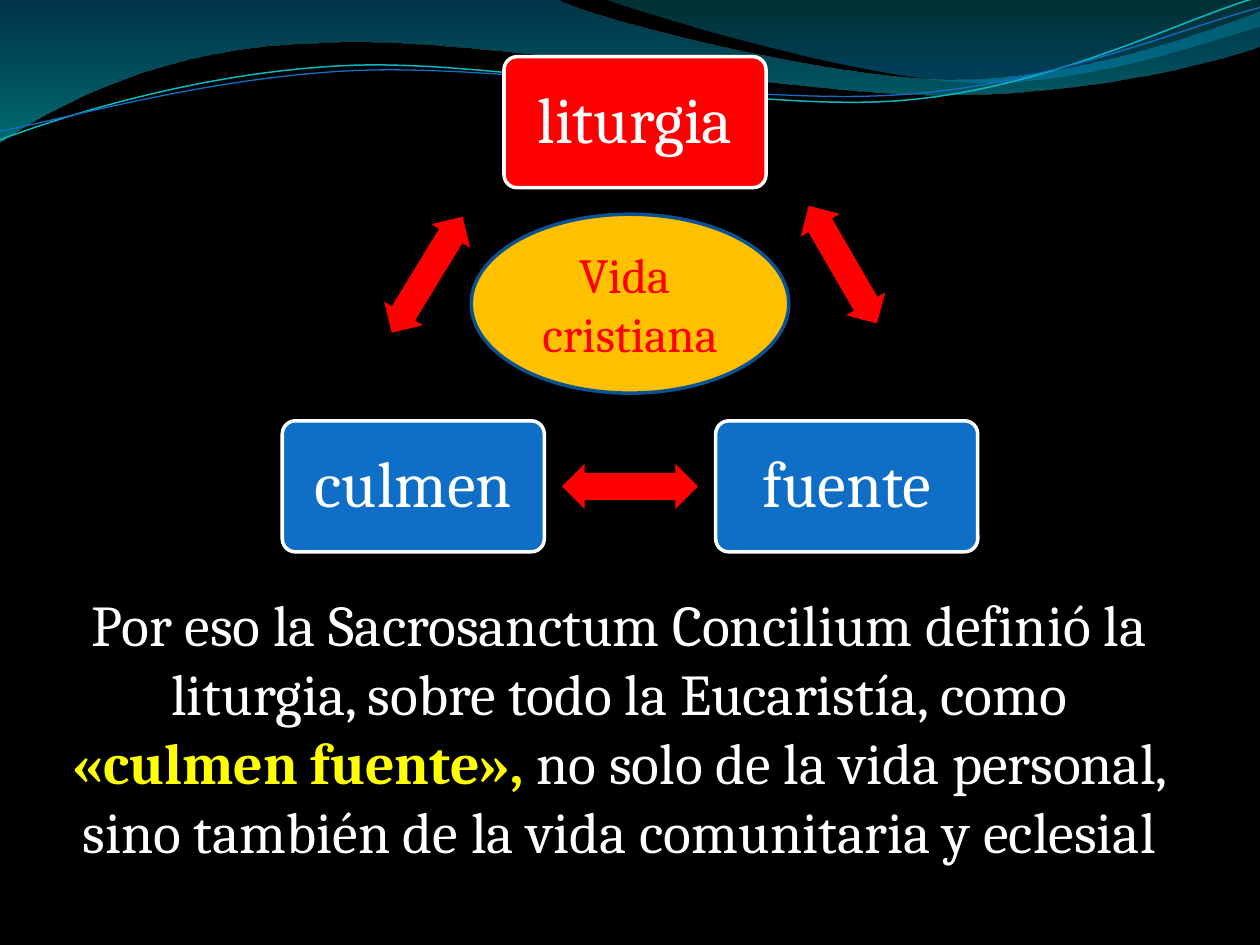
from collections import namedtuple

from lxml import etree
from pptx import Presentation
from pptx.dml.color import RGBColor
from pptx.enum.shapes import MSO_SHAPE
from pptx.enum.text import MSO_ANCHOR, PP_ALIGN
from pptx.oxml.ns import qn
from pptx.util import Inches, Pt

CARD, ARROW, OVAL = MSO_SHAPE.ROUNDED_RECTANGLE, MSO_SHAPE.LEFT_RIGHT_ARROW, MSO_SHAPE.OVAL
MIDDLE, CENTER = MSO_ANCHOR.MIDDLE, PP_ALIGN.CENTER

BLACK = RGBColor(0x00, 0x00, 0x00)
WHITE = RGBColor(0xFF, 0xFF, 0xFF)
RED = RGBColor(0xFF, 0x00, 0x00)
BLUE = RGBColor(0x0F, 0x6F, 0xC6)
NAVY = RGBColor(0x0B, 0x52, 0x92)
GOLD = RGBColor(0xFF, 0xC0, 0x00)
YELLOW = RGBColor(0xFF, 0xFF, 0x00)
AQUA = RGBColor(0x0A, 0xB8, 0xBF)
WAVE_BLUE = RGBColor(0x00, 0x74, 0xA1)
WAVE_TEAL = RGBColor(0x00, 0xC6, 0xCF)
CREST_TEAL = RGBColor(0x00, 0xA1, 0xA9)
CREST_BLUE = RGBColor(0x00, 0x8B, 0xBF)

FONT = "Cambria"
COLUMNS, ROWS = 10, 7.5
CELL = Inches(1)

# Boxes are measured in columns and rows of the slide grid.
Box = namedtuple("Box", "left top width height")
HEADER = Box(0, 0, COLUMNS, 1.2)
DIAGRAM = Box(2.24, 0.45, 5.52, 3.93)
STATEMENT = Box(0.43, 4.62, 9.06, 2.44)
CARD_SIZE, ARROW_SIZE, OVAL_SIZE = (2.08, 1.04), (1.08, 0.36), (2.52, 1.42)

# Each wave is a start point and segments: one point is a line, three a Bézier curve.
WAVE = [(0, 0), [(4.4, -0.01)],
        [(4.76, 0.17), (6.64, 0.63), (7.58, 0.63)],
        [(8.53, 0.63), (9.58, 0.26), (10, 0.09)],
        [(10.01, 0.36)],
        [(9.83, 0.44), (8.7, 0.76), (7.46, 0.75)],
        [(6.22, 0.75), (3.82, 0.28), (2.57, 0.34)],
        [(1.29, 0.36), (0.46, 0.83), (-0.01, 1.13)],
        [(0, 0)]]
CREST = [(4.79, -0.01),
         [(5.09, 0.11), (6.82, 0.62), (7.69, 0.65)],
         [(8.56, 0.69), (9.61, 0.32), (10, 0.21)],
         [(10, 0)], [(4.79, -0.01)]]
AQUA_THREAD = [(0, 1.11),
               [(0.48, 0.93), (1.58, 0.57), (2.77, 0.52)],
               [(3.95, 0.47), (5.93, 0.89), (7.13, 0.8)],
               [(8.33, 0.71), (9.38, 0.15), (9.98, -0.02)]]
BLUE_THREAD = [(0, 1.04),
               [(0.47, 0.96), (1.64, 0.61), (2.83, 0.56)],
               [(4.03, 0.51), (5.97, 0.84), (7.17, 0.75)],
               [(8.36, 0.67), (9.41, 0.21), (10, 0.06)]]


def add_outline(slide, box, wave, close):
    """Draw a freeform, turning each three-point segment into a Bézier curve."""
    start, *segments = wave
    points = [((box.left + x) * CELL, (box.top + y) * CELL)
              for x, y in [start, *(point for segment in segments for point in segment)]]
    builder = slide.shapes.build_freeform(*points[0])
    builder.add_line_segments(points[1:], close=close)
    outline = builder.convert_to_shape()
    outline.shadow.inherit = False

    lines = iter(list(outline._element.iter(qn("a:lnTo"))))
    for segment in segments:
        steps = [next(lines) for _ in segment]
        if len(steps) == 3:
            curve = etree.Element(qn("a:cubicBezTo"))
            steps[0].addprevious(curve)
            for step in steps:
                curve.append(step[0])
                step.getparent().remove(step)
    return outline


def add_header(slide, box):
    bands = [(WAVE, [(0, WAVE_BLUE, 45), (1, WAVE_TEAL, 55)]),
             (CREST, [(0, CREST_TEAL, 30), (0.8, CREST_BLUE, 45)])]
    for wave, stops in bands:
        band = add_outline(slide, box, wave, close=True)
        band.line.fill.background()
        band.fill.gradient()
        band.fill.gradient_angle = 270
        for stop, (position, color, _) in zip(band.fill.gradient_stops, stops):
            stop.position = position
            stop.color.rgb = color
        colors = band._element.spPr.iter(qn("a:srgbClr"))
        for color_element, (_, _, opacity) in zip(colors, stops):
            etree.SubElement(color_element, qn("a:alpha"), val=str(opacity * 1000))

    for wave, color, weight in [(AQUA_THREAD, AQUA, 0.85), (BLUE_THREAD, BLUE, 0.75)]:
        thread = add_outline(slide, box, wave, close=False)
        thread.fill.background()
        thread.line.color.rgb = color
        thread.line.width = Pt(weight)


def add_part(slide, box, kind, offset, size, fill, border=None):
    """Add a shape at an offset, in columns and rows, from the box's corner."""
    place = (box.left + offset[0], box.top + offset[1], *size)
    part = slide.shapes.add_shape(kind, *(int(length * CELL) for length in place))
    part.shadow.inherit = False
    part.fill.solid()
    part.fill.fore_color.rgb = fill
    if border is None:
        part.line.fill.background()
    else:
        part.line.color.rgb = border
        part.line.width = Pt(2)
    return part


def write_label(part, label, size, color):
    frame = part.text_frame
    frame.word_wrap = True
    frame.vertical_anchor = MIDDLE
    frame.text = label
    for paragraph in frame.paragraphs:
        paragraph.alignment = CENTER
        paragraph.font.name = FONT
        paragraph.font.size = Pt(size)
        paragraph.font.color.rgb = color


def add_cycle(slide, box):
    base = box.height - CARD_SIZE[1]
    cards = [("liturgia", (1.76, 0), RED),
             ("fuente", (box.width - CARD_SIZE[0], base), BLUE),
             ("culmen", (0, base), BLUE)]
    for word, offset, color in cards:
        card = add_part(slide, box, CARD, offset, CARD_SIZE, color, WHITE)
        card.adjustments[0] = 0.1
        write_label(card, word, 37, WHITE)
        card.text_frame.paragraphs[0].line_spacing = 0.9

    arrows = [((3.91, 1.47), 59.9), ((2.22, 3.23), 180), ((0.61, 1.55), 301.4)]
    for offset, rotation in arrows:
        arrow = add_part(slide, box, ARROW, offset, ARROW_SIZE, RED)
        arrow.adjustments[0], arrow.adjustments[1] = 0.6, 0.5
        arrow.rotation = rotation

    heart = add_part(slide, box, OVAL, (1.5, 1.25), OVAL_SIZE, GOLD, NAVY)
    write_label(heart, "Vida \ncristiana", 28, RED)


def add_statement(slide, box):
    statement = slide.shapes.add_textbox(*(int(length * CELL) for length in box))
    frame = statement.text_frame
    frame.word_wrap = True
    frame.margin_left, frame.margin_right = 0, Inches(0.09)
    paragraph = frame.paragraphs[0]
    paragraph.alignment = CENTER
    paragraph.font.name = FONT
    paragraph.font.size = Pt(33)
    phrases = [
        ("Por eso la Sacrosanctum Concilium definió la liturgia, "
         "sobre todo la Eucaristía, como ", WHITE, False),
        ("«culmen fuente», ", YELLOW, True),
        ("no solo de la vida personal, sino también de la vida "
         "comunitaria y eclesial", WHITE, False),
    ]
    for words, color, bold in phrases:
        phrase = paragraph.add_run()
        phrase.text = words
        phrase.font.color.rgb = color
        phrase.font.bold = bold


def main():
    deck = Presentation()
    deck.slide_width, deck.slide_height = int(COLUMNS * CELL), int(ROWS * CELL)
    slide = deck.slides.add_slide(deck.slide_layouts[6])
    slide.background.fill.solid()
    slide.background.fill.fore_color.rgb = BLACK
    add_header(slide, HEADER)
    add_statement(slide, STATEMENT)
    add_cycle(slide, DIAGRAM)
    deck.save("out.pptx")


if __name__ == "__main__":
    main()
